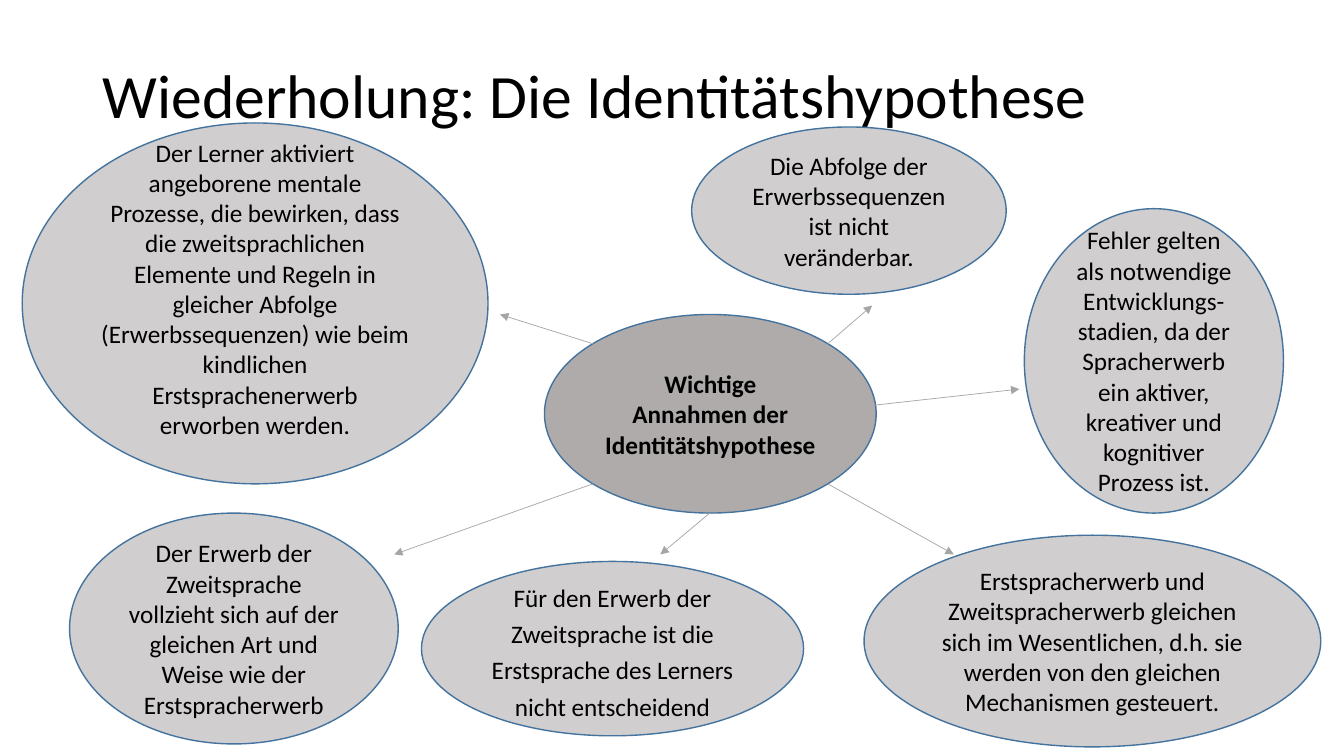
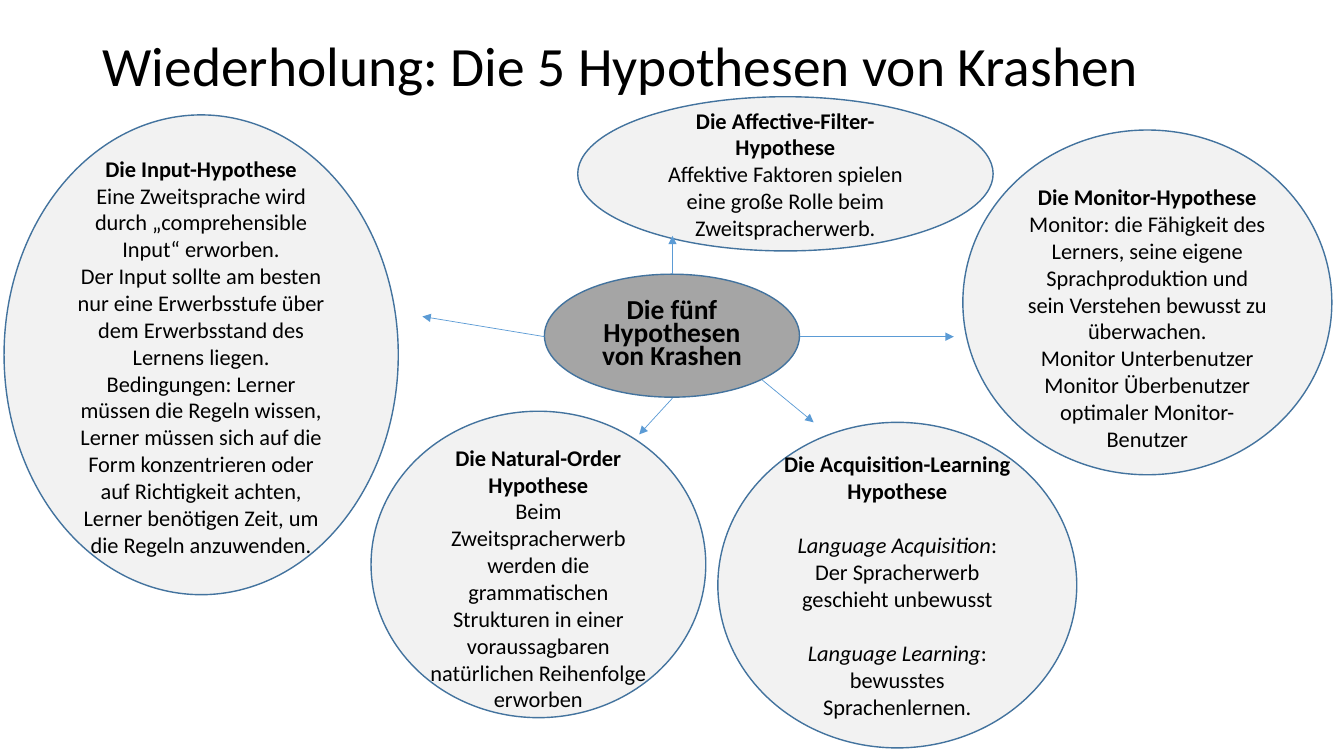
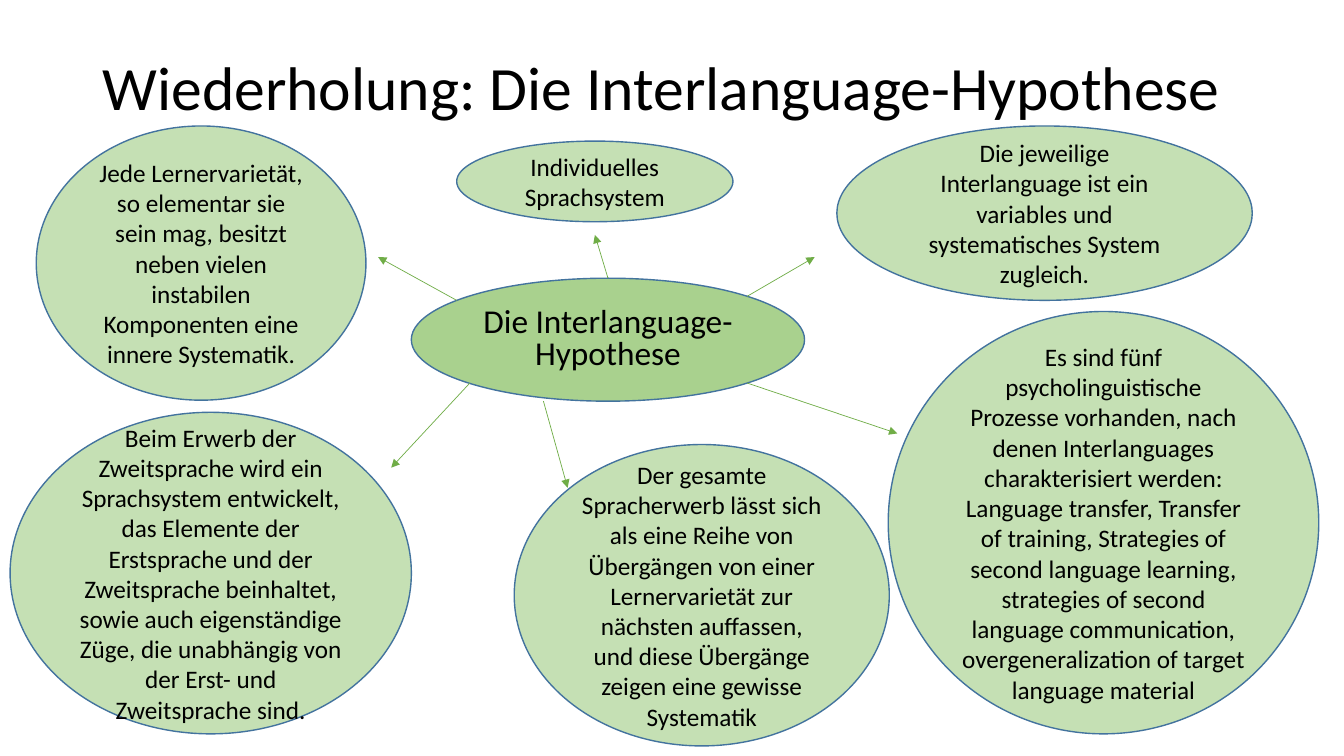
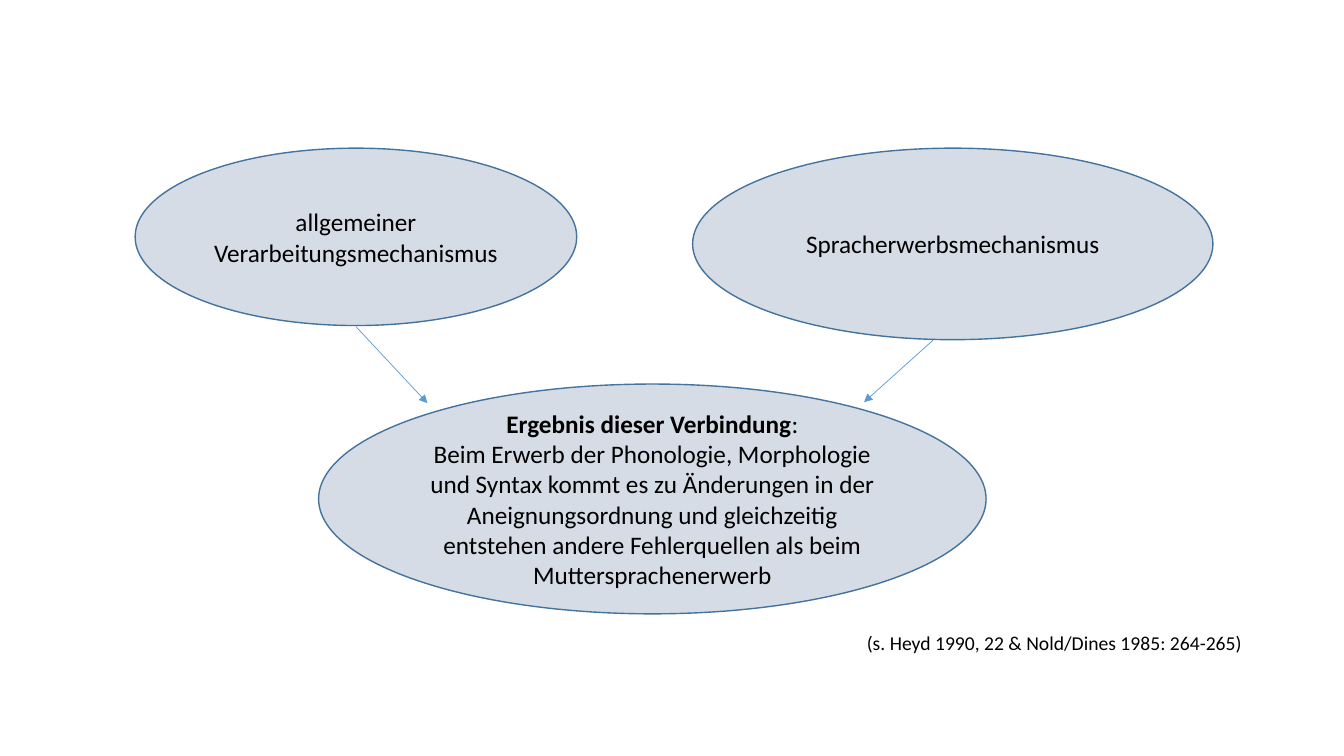
from pptx import Presentation
from pptx.dml.color import RGBColor
from pptx.enum.shapes import MSO_CONNECTOR as CONN, MSO_SHAPE as SHAPE
from pptx.enum.text import MSO_ANCHOR as ANCHOR, PP_ALIGN as ALIGN
from pptx.oxml.ns import qn
from pptx.util import Inches, Pt
from lxml import etree

FONT = "Calibri"
COLORS = {
    "text": "000000", "outline": "43739E",
    "warm_hub": "AFABAB", "warm": "D0CECE", "gray_arrow": "A5A5A5",
    "gray_hub": "A5A5A5", "light": "F2F2F2", "blue_arrow": "5B9BD5",
    "green_hub": "A9D18E", "green": "C5E0B4", "green_arrow": "70AD47",
    "ice": "D6DCE5",
}
BOLD = {"bold": True}
ITALIC = {"italic": True}


def rgb(name):
    return RGBColor.from_string(COLORS[name])


def apply(obj, values):
    for name, value in values.items():
        setattr(obj, name, value)


# Text: each paragraph is a string or a list of (text, font values) runs
def write(shape, paragraphs, size, align=ALIGN.CENTER, para=None, gaps=None):
    tf = shape.text_frame
    apply(tf, {"word_wrap": True, "vertical_anchor": ANCHOR.MIDDLE})
    for i, runs in enumerate(paragraphs):
        p = tf.paragraphs[0] if i == 0 else tf.add_paragraph()
        apply(p, {"alignment": align, **(para or {})})
        if gaps and i in gaps:
            p.space_before = Pt(gaps[i])
        for text, style in [(runs, {})] if isinstance(runs, str) else runs:
            r = p.add_run()
            r.text = text
            apply(r.font, {"name": FONT, "size": Pt(size), **style})
            r.font.color.rgb = rgb("text")
    return tf


def add_text(s, box, text, size, align=ALIGN.LEFT, para=None):
    write(s.shapes.add_textbox(*map(Inches, box)), [text], size, align, para)


def add_title(s, height, text, size=44):
    add_text(s, (0.92, 0.4, 11.5, height), text, size, para={"line_spacing": 0.9})


# Ovals: pad_top and pad_bottom move the centred text down or up
def add_oval(s, box, fill, paragraphs, size=18, para=None, gaps=None,
             pad_top=0.05, pad_bottom=0.05):
    sp = s.shapes.add_shape(SHAPE.OVAL, *map(Inches, box))
    sp.shadow.inherit = False
    sp.fill.solid()
    sp.fill.fore_color.rgb = rgb(fill)
    sp.line.color.rgb = rgb("outline")
    sp.line.width = Pt(1)
    tf = write(sp, paragraphs, size, para=para, gaps=gaps)
    apply(tf, {"margin_top": Inches(pad_top), "margin_bottom": Inches(pad_bottom)})


def add_arrows(s, color, routes):
    for route in routes:
        cxn = s.shapes.add_connector(CONN.STRAIGHT, *map(Inches, route))
        cxn.line.color.rgb = rgb(color)
        cxn.line.width = Pt(0.5)
        etree.SubElement(cxn.line._get_or_add_ln(), qn("a:tailEnd"), type="triangle")
        etree.SubElement(cxn._element.spPr, qn("a:effectLst"))


# Slide 1
def identity_slide(s):
    add_title(s, 1.16, "Wiederholung: Die Identitätshypothese")
    add_oval(s, (5.4, 3.12, 3.29, 1.97), "warm_hub",
             [[("Wichtige", BOLD)], [("Annahmen der Identitätshypothese", BOLD)]])
    add_oval(s, (4.18, 5.57, 3.79, 1.73), "warm",
             ["Für den Erwerb der Zweitsprache ist die Erstsprache des Lerners "
              "nicht entscheidend"],
             para={"line_spacing": 1.2, "space_after": Pt(6)})
    add_oval(s, (0.22, 1.22, 4.62, 3.58), "warm",
             ["Der Lerner aktiviert angeborene mentale Prozesse, die bewirken, "
              "dass die zweitsprachlichen Elemente und Regeln in gleicher Abfolge "
              "(Erwerbssequenzen) wie beim kindlichen Erstsprachenerwerb "
              "erworben werden."], pad_bottom=0.35)
    for box, text in [
        ((10.16, 2.07, 2.57, 3.02),
         "Fehler gelten als notwendige Entwicklungs-stadien, da der Spracherwerb "
         "ein aktiver, kreativer und kognitiver Prozess ist."),
        ((8.57, 5.31, 4.53, 2.1),
         "Erstspracherwerb und Zweitspracherwerb gleichen sich im Wesentlichen, "
         "d.h. sie werden von den gleichen Mechanismen gesteuert."),
        ((0.69, 5.09, 3.26, 2.29),
         "Der Erwerb der Zweitsprache vollzieht sich auf der gleichen Art und "
         "Weise wie der Erstspracherwerb"),
        ((6.86, 1.26, 3.12, 1.66),
         "Die Abfolge der Erwerbssequenzen ist nicht veränderbar."),
    ]:
        add_oval(s, box, "warm", [text])
    add_arrows(s, "gray_arrow", [
        (8.21, 3.41, 8.65, 3.03), (5.88, 3.41, 4.96, 3.12),
        (8.67, 4.02, 10.11, 3.86), (5.88, 4.8, 3.91, 5.5),
        (7.04, 5.09, 6.55, 5.5), (8.21, 4.8, 9.46, 5.5)])


# Slide 2
def krashen_slide(s):
    add_title(s, 0.56, "Wiederholung: Die 5 Hypothesen von Krashen", 39.6)
    add_oval(s, (5.4, 2.72, 2.53, 1.22), "gray_hub",
             [[("Die fünf Hypothesen von Krashen", BOLD)]], 19.6,
             para={"line_spacing": 0.7, "space_before": Pt(10)})
    for box, heading, body, layout in [
        ((3.68, 4.08, 3.32, 3.04), "Die Natural-Order Hypothese",
         ["Beim Zweitspracherwerb werden die grammatischen Strukturen in einer "
          "voraussagbaren natürlichen Reihenfolge erworben"], {"pad_top": 0.32}),
        ((7.12, 4.19, 3.56, 3.23), "Die Acquisition-Learning Hypothese",
         [[("Language Acquisition", ITALIC),
           (": Der Spracherwerb geschieht unbewusst", {})],
          [("Language Learning", ITALIC), (": bewusstes Sprachenlernen.", {})]],
         {"gaps": {1: 19.5, 2: 19.5}}),
        ((9.55, 1.29, 3.66, 3.42), "Die Monitor-Hypothese",
         ["Monitor: die Fähigkeit des Lerners, seine eigene Sprachproduktion und "
          "sein Verstehen bewusst zu überwachen.",
          "Monitor Unterbenutzer", "Monitor Überbenutzer",
          "optimaler Monitor-Benutzer"], {"pad_top": 0.35}),
        ((0.04, 1.14, 3.91, 4.76), "Die Input-Hypothese",
         ["Eine Zweitsprache wird durch „comprehensible Input“ erworben.",
          "Der Input sollte am besten nur eine Erwerbsstufe über dem Erwerbsstand "
          "des Lernens liegen.",
          "Bedingungen: Lerner müssen die Regeln wissen, Lerner müssen sich auf "
          "die Form konzentrieren oder auf Richtigkeit achten, Lerner benötigen "
          "Zeit, um die Regeln anzuwenden."], {"pad_top": 0.08}),
        ((5.73, 0.96, 4.12, 1.53), "Die Affective-Filter-Hypothese",
         ["Affektive Faktoren spielen eine große Rolle beim Zweitspracherwerb."], {}),
    ]:
        add_oval(s, box, "light", [[(heading, BOLD)], *body], 16, **layout)
    add_arrows(s, "blue_arrow", [
        (6.67, 3.95, 6.34, 4.31), (7.56, 3.77, 8.07, 4.19),
        (7.93, 3.34, 9.46, 3.34), (6.67, 2.72, 6.67, 2.34),
        (5.4, 3.34, 4.19, 3.14)])


# Slide 3
def interlanguage_slide(s):
    add_title(s, 1, "Wiederholung: Die Interlanguage-Hypothese")
    add_oval(s, (4.08, 2.76, 3.9, 1.22), "green_hub",
             ["Die Interlanguage-Hypothese"], 23.8,
             para={"line_spacing": 0.8, "space_before": Pt(10)})
    for box, *paragraphs in [
        ((0.36, 1.25, 3.27, 2.72),
         "Jede Lernervarietät, so elementar sie sein mag, besitzt neben vielen "
         "instabilen Komponenten eine innere Systematik."),
        ((0.1, 4.09, 3.98, 3.19),
         "Beim Erwerb der Zweitsprache wird ein Sprachsystem entwickelt, das "
         "Elemente der Erstsprache und der Zweitsprache beinhaltet, sowie auch "
         "eigenständige Züge, die unabhängig von der Erst- und Zweitsprache sind."),
        ((4.53, 1.4, 2.74, 0.8), "Individuelles Sprachsystem"),
        ((5.1, 4.41, 3.72, 2.99),
         "Der gesamte Spracherwerb lässt sich als eine Reihe von Übergängen von "
         "einer Lernervarietät zur nächsten auffassen, und diese Übergänge zeigen "
         "eine gewisse Systematik"),
        ((8.81, 3.09, 4.27, 4.19),
         "Es sind fünf psycholinguistische Prozesse vorhanden, nach denen "
         "Interlanguages charakterisiert werden:",
         "Language transfer, Transfer of training, Strategies of second language "
         "learning, strategies of second language communication, "
         "overgeneralization of target language material"),
        ((8.3, 1.25, 4.12, 1.73),
         "Die jeweilige Interlanguage ist ein variables und systematisches "
         "System zugleich."),
    ]:
        add_oval(s, box, "green", paragraphs)
    add_arrows(s, "green_arrow", [
        (7.41, 2.94, 8.08, 2.55), (7.41, 3.8, 8.9, 4.3),
        (4.53, 2.98, 3.75, 2.55), (4.66, 3.8, 3.88, 4.64),
        (5.39, 3.98, 5.63, 4.84), (6.03, 2.76, 5.9, 2.33)])


# Slide 4
def result_slide(s):
    for box, *paragraphs in [
        ((1.34, 1.47, 4.38, 1.76), "allgemeiner Verarbeitungsmechanismus"),
        ((6.87, 1.47, 5.16, 1.9), "Spracherwerbsmechanismus"),
        ((3.16, 3.81, 6.62, 2.28),
         [("Ergebnis dieser Verbindung", BOLD), (":", {})],
         "Beim Erwerb der Phonologie, Morphologie und Syntax kommt es zu "
         "Änderungen in der Aneignungsordnung und gleichzeitig entstehen andere "
         "Fehlerquellen als beim Muttersprachenerwerb"),
    ]:
        add_oval(s, box, "ice", paragraphs)
    add_arrows(s, "blue_arrow", [
        (3.53, 3.24, 4.24, 4), (9.26, 3.37, 8.57, 3.99)])
    add_text(s, (7.92, 6.2, 4.5, 0.36),
             "(s. Heyd 1990, 22 & Nold/Dines 1985: 264-265)", 14, ALIGN.RIGHT)


def main():
    prs = Presentation()
    apply(prs, {"slide_width": Inches(13.33), "slide_height": Inches(7.5)})
    for build in (identity_slide, krashen_slide, interlanguage_slide, result_slide):
        build(prs.slides.add_slide(prs.slide_layouts[6]))
    prs.save("out.pptx")


if __name__ == "__main__":
    main()
